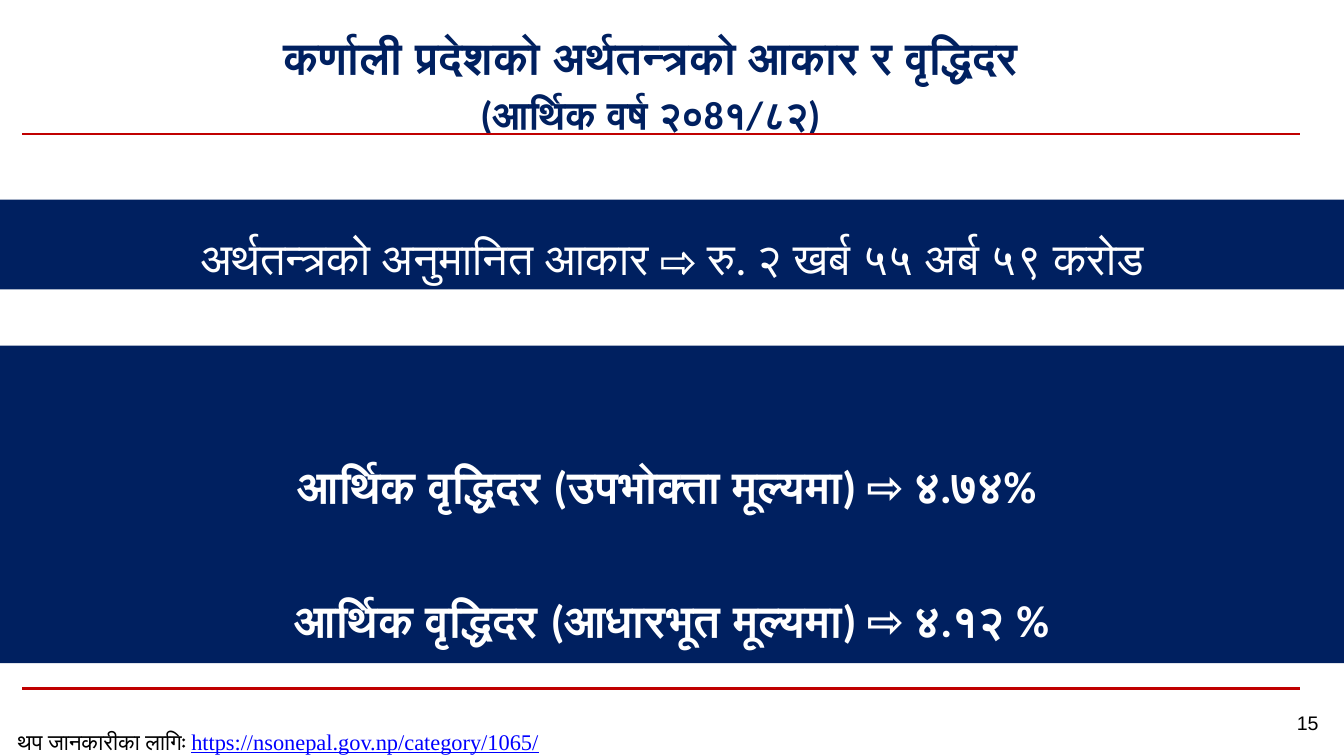
"""Build the slide on the size and growth of the Karnali economy."""
from lxml import etree
from pptx import Presentation
from pptx.dml.color import RGBColor
from pptx.enum.shapes import MSO_CONNECTOR, MSO_SHAPE
from pptx.enum.text import MSO_ANCHOR, MSO_AUTO_SIZE, PP_ALIGN
from pptx.oxml.ns import qn
from pptx.util import Inches, Pt

NAVY = RGBColor(0x00, 0x20, 0x60)
RED = RGBColor(0xC0, 0x00, 0x00)
WHITE = RGBColor(0xFF, 0xFF, 0xFF)
BLACK = RGBColor(0x00, 0x00, 0x00)
BLUE = RGBColor(0x00, 0x00, 0xFF)
STRAIGHT = MSO_CONNECTOR.STRAIGHT
RECTANGLE = MSO_SHAPE.RECTANGLE
TOP, MIDDLE = MSO_ANCHOR.TOP, MSO_ANCHOR.MIDDLE
NO_FIT = MSO_AUTO_SIZE.NONE
LEFT, CENTER = PP_ALIGN.LEFT, PP_ALIGN.CENTER
WIDTH, HEIGHT = Inches(13.33), Inches(7.5)


def style(font, size, color, name="Calibri", bold=False):
    """Set the look of a paragraph or run font."""
    font.size, font.name, font.bold = Pt(size), name, bold
    font.color.rgb = color


def fill_lines(tf, lines, color, bold, spacing):
    """Write centred (text, size) lines into a text frame."""
    tf.word_wrap = True
    tf.auto_size = NO_FIT
    for i, (text, size) in enumerate(lines):
        p = tf.add_paragraph() if i else tf.paragraphs[0]
        p.add_run().text = text
        p.alignment, p.line_spacing = CENTER, spacing
        style(p.font, size, color, bold=bold)


def add_title(s, lines):
    """Place the heading in the title placeholder."""
    sp = s.shapes.title
    sp.left, sp.top = Inches(1.67), Inches(0.17)
    sp.width, sp.height = Inches(9.56), Inches(1.25)
    sp.text_frame.vertical_anchor = TOP
    fill_lines(sp.text_frame, lines, NAVY, True, 1.14)


def add_rule(s, y):
    """Draw a red rule across the slide."""
    line = s.shapes.add_connector(STRAIGHT, Inches(0.22), y, Inches(12.89), y)
    line.line.color.rgb, line.line.width = RED, Pt(1.5)
    etree.SubElement(line._element.spPr, qn("a:effectLst"))


def add_band(s, top, height, lines, bottom_inset, bold=False, spacing=1.0):
    """Draw a full-width navy band with white lines."""
    sp = s.shapes.add_shape(RECTANGLE, 0, Inches(top), WIDTH, Inches(height))
    sp.shadow.inherit = False
    sp.fill.solid()
    sp.fill.fore_color.rgb = NAVY
    sp.line.fill.background()
    tf = sp.text_frame
    tf.vertical_anchor = MIDDLE
    tf.margin_top, tf.margin_bottom = Inches(0.3), Inches(bottom_inset)
    fill_lines(tf, [(text, 32) for text in lines], WHITE, bold, spacing)


def add_note(s, left, top, width, text, size, align=LEFT):
    """Add a small black text box and return its paragraph."""
    box = s.shapes.add_textbox(Inches(left), Inches(top), Inches(width), Inches(0.33))
    box.text_frame.word_wrap = True
    p = box.text_frame.paragraphs[0]
    p.alignment = align
    r = p.add_run()
    r.text = text
    style(r.font, size, BLACK, "Arial")
    return p


def main():
    """Build and save the slide."""
    prs = Presentation()
    prs.slide_width, prs.slide_height = WIDTH, HEIGHT
    s = prs.slides.add_slide(prs.slide_layouts[5])
    for y in (Inches(1.33), Inches(6.83)):
        add_rule(s, y)
    add_title(s, [("कर्णाली प्रदेशको अर्थतन्त्रको आकार र वृद्धिदर", 32),
                  ("(आर्थिक वर्ष २०8१/८२)", 28)])
    add_band(s, 3.43, 3.15,
             ["आर्थिक वृद्धिदर (उपभोक्ता मूल्यमा) ⇨ ४.७४% ",
              "आर्थिक वृद्धिदर (आधारभूत मूल्यमा) ⇨ ४.१२ %"],
             0.15, bold=True, spacing=2.5)
    add_band(s, 1.98, 0.89,
             ["अर्थतन्त्रको अनुमानित आकार ⇨ रु. २ खर्ब ५५ अर्ब ५९ करोड"], 0.05)
    add_note(s, 12.67, 7, 0.6, "15", 14, CENTER)
    p = add_note(s, 0.08, 7.17, 6.17, "थप जानकारीका लागिः ", 16)
    r = p.add_run()
    r.text = "https://nsonepal.gov.np/category/1065/"
    style(r.font, 16, BLUE, "Times New Roman")
    r.font.underline = True
    prs.save("out.pptx")


if __name__ == "__main__":
    main()
